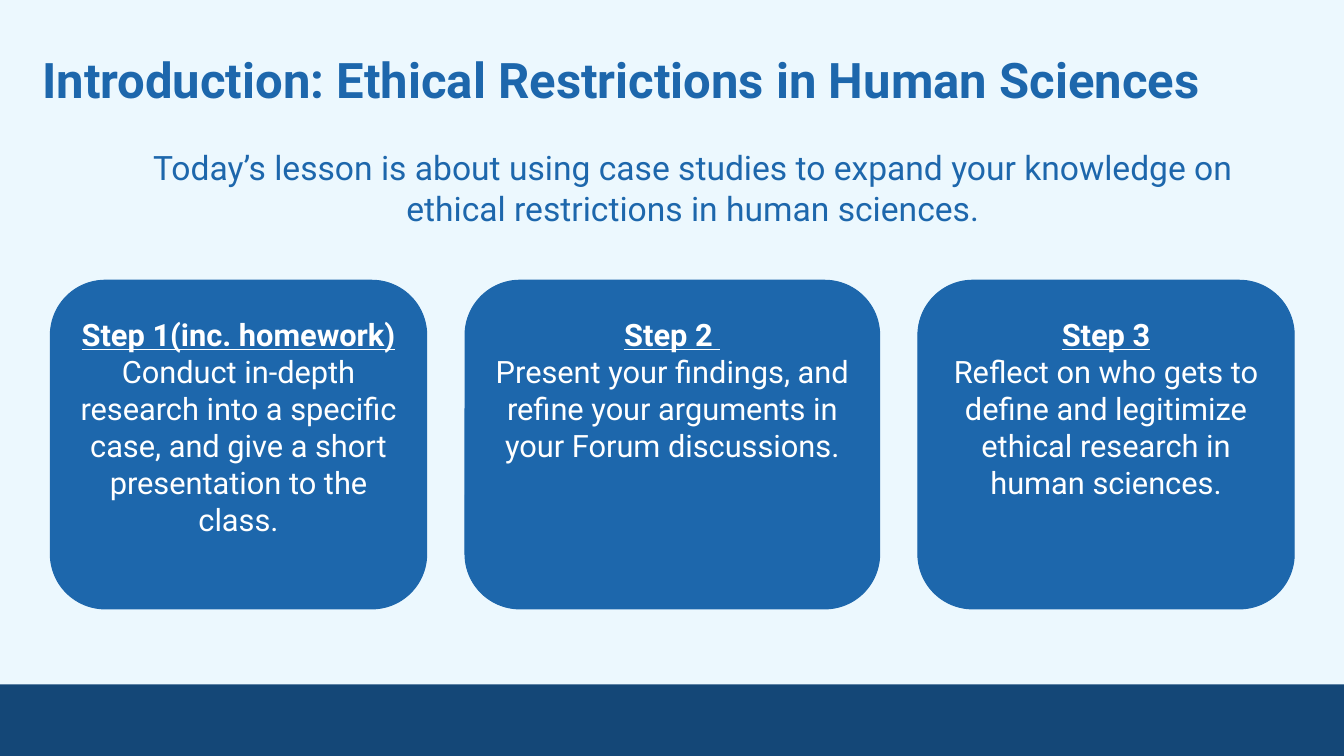
import pptx
import pptx.dml.color
import pptx.enum.shapes
import pptx.enum.text
import pptx.util

COLORS = {"background": "ECF8FE", "primary": "1D67AC", "footer": "144777", "white": "FFFFFF"}
ALIGN = pptx.enum.text.PP_ALIGN
ANCHOR = pptx.enum.text.MSO_ANCHOR
SHAPE = pptx.enum.shapes.MSO_SHAPE


class LessonSlide:
    """Draws styled elements on one slide, placed in percent of its size."""

    font = "Roboto"

    def __init__(self, presentation):
        self.width = presentation.slide_width
        self.height = presentation.slide_height
        self.slide = presentation.slides.add_slide(presentation.slide_layouts[6])
        fill = self.slide.background.fill
        fill.solid()
        fill.fore_color.rgb = self.color("background")

    def color(self, name):
        return pptx.dml.color.RGBColor.from_string(COLORS[name])

    def box(self, left, top, width, height):
        return (int(self.width * left / 100), int(self.height * top / 100),
                int(self.width * width / 100), int(self.height * height / 100))

    def frame(self, shape, inset, top_inset, anchor):
        frame = shape.text_frame
        frame.word_wrap = True
        frame.vertical_anchor = anchor
        frame.margin_left = frame.margin_right = frame.margin_bottom = pptx.util.Inches(inset)
        frame.margin_top = pptx.util.Inches(top_inset)
        return frame

    def add_text(self, paragraph, text, size, color, align, bold=False, underline=False):
        paragraph.alignment = align
        run = paragraph.add_run()
        run.text = text
        run.font.name = self.font
        run.font.size = pptx.util.Pt(size)
        run.font.color.rgb = self.color(color)
        run.font.bold = bold
        run.font.underline = underline

    def text(self, area, text, size, inset, anchor=ANCHOR.TOP, align=ALIGN.LEFT, bold=False):
        shape = self.slide.shapes.add_textbox(*self.box(*area))
        frame = self.frame(shape, inset, inset, anchor)
        self.add_text(frame.paragraphs[0], text, size, "primary", align, bold)

    def block(self, kind, area, color):
        shape = self.slide.shapes.add_shape(kind, *self.box(*area))
        shape.shadow.inherit = False
        shape.fill.solid()
        shape.fill.fore_color.rgb = self.color(color)
        shape.line.color.rgb = self.color(color)
        shape.line.width = pptx.util.Pt(0.75)
        return shape

    def footer(self, area):
        self.block(SHAPE.RECTANGLE, area, "footer").line.fill.background()

    def card(self, area, heading, body):
        shape = self.block(SHAPE.ROUNDED_RECTANGLE, area, "primary")
        shape.adjustments[0] = 0.167
        frame = self.frame(shape, 0.1, 0.19, ANCHOR.TOP)
        self.add_text(frame.paragraphs[0], heading, 22, "white", ALIGN.CENTER, True, True)
        self.add_text(frame.add_paragraph(), body, 22, "white", ALIGN.CENTER)


def main():
    presentation = pptx.Presentation()
    presentation.slide_width = pptx.util.Inches(13.33)
    presentation.slide_height = pptx.util.Inches(7.5)
    lesson = LessonSlide(presentation)

    lesson.footer((0, 90.53, 100, 9.47))
    lesson.text((2.18, 4.67, 91.45, 11.47), "Introduction: Ethical Restrictions in Human Sciences",
                35, 0.13, anchor=ANCHOR.MIDDLE, bold=True)
    lesson.text((6.83, 18.13, 89.42, 24.27),
                "Today’s lesson is about using case studies to expand your knowledge on "
                "ethical restrictions in human sciences.", 24, 0.1, align=ALIGN.CENTER)

    steps = [
        (28, "Step 1(inc. homework)",
         "Conduct in-depth research into a specific case, and give a short presentation to the class."),
        (30.85, "Step 2 ",
         "Present your findings, and refine your arguments in your Forum discussions."),
        (28, "Step 3",
         "Reflect on who gets to define and legitimize ethical research in human sciences."),
    ]
    left, gap = 3.75, 2.85
    for width, heading, body in steps:
        lesson.card((left, 37.07, width, 43.47), heading, body)
        left += width + gap

    presentation.save("out.pptx")


if __name__ == "__main__":
    main()
